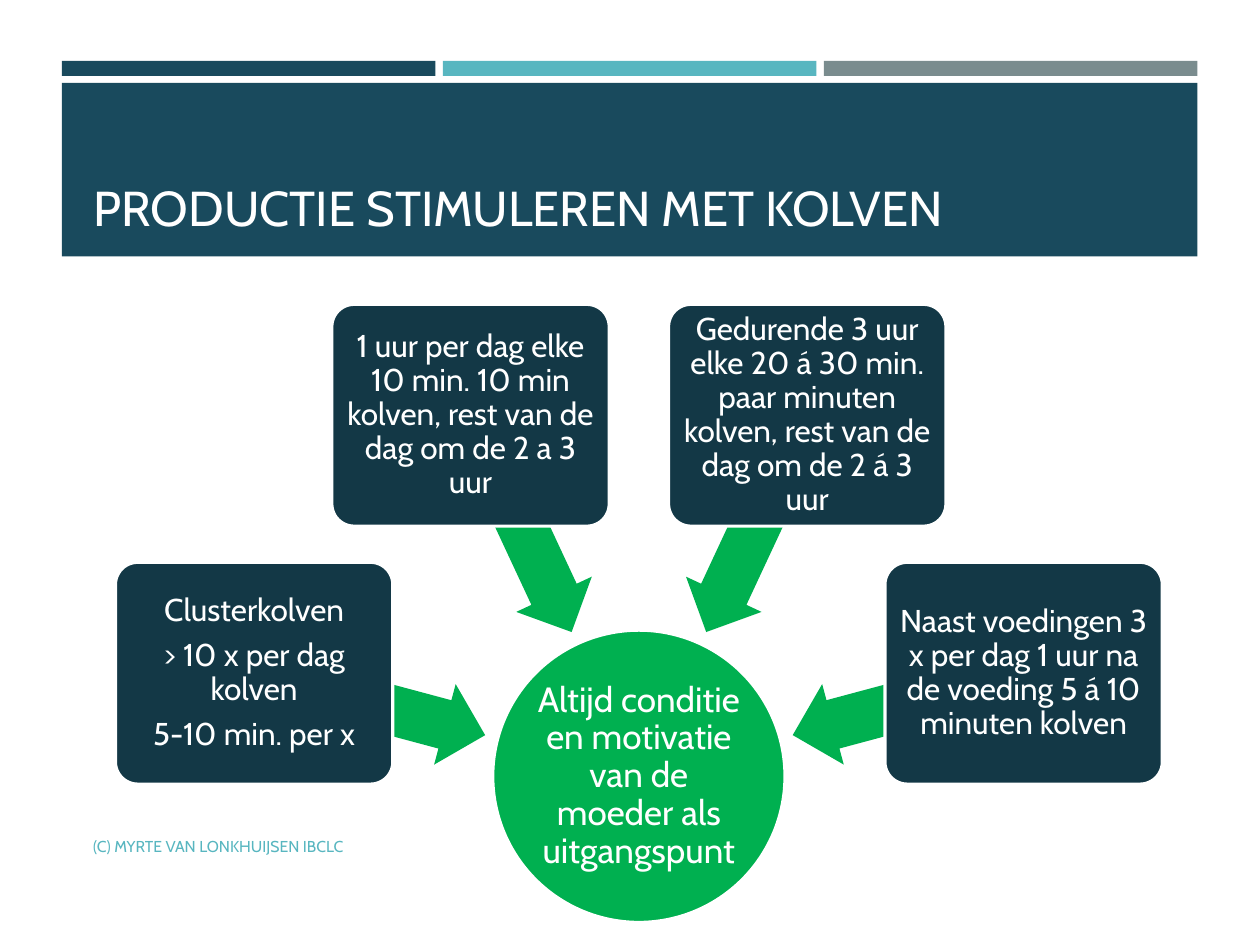
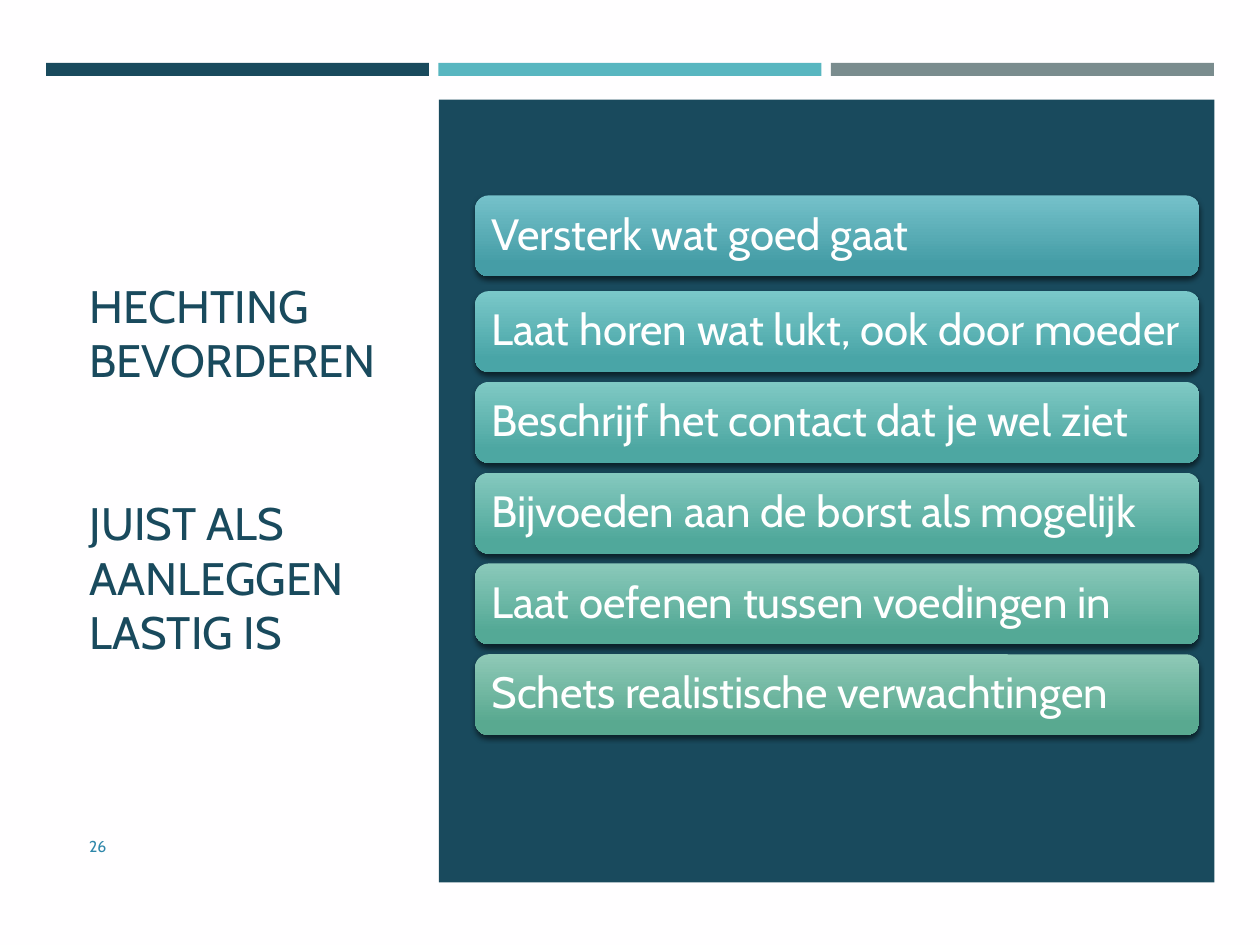
from math import cos, radians, sin

from lxml.etree import SubElement
from pptx import Presentation
from pptx.dml.color import RGBColor
from pptx.enum.shapes import MSO_SHAPE
from pptx.enum.text import MSO_ANCHOR, MSO_AUTO_SIZE, PP_ALIGN
from pptx.oxml.ns import qn
from pptx.util import Cm, Pt

NAVY, TEAL, GREY = "194A5D", "58B6C0", "7A8C8E"
DARK, GREEN, BLUE, WHITE = "133846", "00B050", "2E87AA", "FFFFFF"
FONT = "Cabin"


def color(code):
    return RGBColor.from_string(code)


class Deck:
    def __init__(self):
        self.show = Presentation()
        self.show.slide_width, self.show.slide_height = Cm(25.4), Cm(19.05)
        self.slide = None

    def page(self, back=WHITE):
        self.slide = self.show.slides.add_slide(self.show.slide_layouts[5])
        fill = self.slide.background.fill
        fill.solid()
        fill.fore_color.rgb = color(back)

    def shape(self, kind, left, top, wide, high, fill, line=None, adjust=()):
        """Fill is one colour, or a pair for a gradient from top to bottom."""
        item = self.slide.shapes.add_shape(
            kind, Cm(left), Cm(top), Cm(wide), Cm(high))
        item.shadow.inherit = False
        if isinstance(fill, str):
            item.fill.solid()
            item.fill.fore_color.rgb = color(fill)
        else:
            item.fill.gradient()
            item.fill.gradient_angle = 270
            for stop, code, place in zip(item.fill.gradient_stops, fill, (0, 0.84)):
                stop.color.rgb = color(code)
                stop.position = place
        if line:
            item.line.color.rgb = color(line)
            item.line.width = Pt(1.75)
        else:
            item.line.fill.background()
        for i, value in enumerate(adjust):
            item.adjustments[i] = value
        return item

    def around(self, kind, x, y, wide, high, fill, **style):
        """Draw a shape around its centre."""
        return self.shape(kind, x - wide / 2, y - high / 2, wide, high, fill, **style)

    def shade(self, item):
        effect = item.element.spPr.find(qn("a:effectLst"))
        outer = SubElement(effect, qn("a:outerShdw"), blurRad="38100",
                           dist="25400", dir="5400000", rotWithShape="0")
        black = SubElement(outer, qn("a:srgbClr"), val="000000")
        SubElement(black, qn("a:alpha"), val="55000")

    def words(self, item, lines, size, code=WHITE, align=PP_ALIGN.LEFT,
              anchor=MSO_ANCHOR.MIDDLE, inset=None, gap=0, after=0, space=None):
        frame = item.text_frame
        frame.word_wrap = True
        frame.auto_size = MSO_AUTO_SIZE.NONE
        frame.vertical_anchor = anchor
        if inset is not None:
            frame.margin_left = frame.margin_right = Cm(inset)
            frame.margin_top = frame.margin_bottom = Cm(inset)
        for i, line in enumerate(lines):
            para = frame.add_paragraph() if i else frame.paragraphs[0]
            para.alignment = align
            para.line_spacing = space
            para.space_before = Pt(gap if i else 0)
            para.space_after = Pt(after)
            run = para.add_run()
            run.text = line
            run.font.size = Pt(size)
            run.font.name = FONT
            run.font.color.rgb = color(code)

    def label(self, item, lines, size, inset, align=PP_ALIGN.CENTER):
        self.words(item, lines, size, align=align, inset=inset,
                   after=0.35 * size, space=0.9)

    def title(self, left, top, wide, high, lines, size, code, **style):
        item = self.slide.shapes.title
        item.left, item.top, item.width, item.height = map(Cm, (left, top, wide, high))
        item.element.getparent().append(item.element)  # in front of the band
        self.words(item, lines, size, code, **style)

    def foot(self, left, wide, text, code):
        box = self.slide.shapes.add_textbox(Cm(left), Cm(16.54), Cm(wide), Cm(1.02))
        self.words(box, [text], 9, code)

    def bars(self, left, top, wide, high, step):
        for i, code in enumerate((NAVY, TEAL, GREY)):
            self.shape(MSO_SHAPE.RECTANGLE, left + i * step, top, wide, high, code)


def pump(deck):
    deck.page()
    # Bars and title band
    deck.bars(1.25, 1.23, 7.53, 0.3, 7.68)
    deck.shape(MSO_SHAPE.RECTANGLE, 1.25, 1.67, 22.89, 3.5, NAVY)
    deck.title(1.63, 1.9, 22.2, 3, ["PRODUCTIE STIMULEREN MET KOLVEN"], 28, WHITE,
               anchor=MSO_ANCHOR.BOTTOM)

    # Hub
    hub_x, hub_y = 12.88, 15.65
    hub = deck.around(MSO_SHAPE.OVAL, hub_x, hub_y, 5.89, 5.89, GREEN, line=WHITE)
    deck.label(hub, ["Altijd conditie en motivatie van de moeder als uitgangspunt"],
               20, 0.03)

    # Boxes on an arc, each with an arrow to the hub
    notes = (
        ["Clusterkolven", "> 10 x per dag kolven", "5-10 min. per x"],
        ["1 uur per dag elke 10 min. 10 min kolven, rest van de dag om de 2 a 3 uur"],
        ["Gedurende 3 uur elke 20 á 30 min. paar minuten kolven, "
         "rest van de dag om de 2 á 3 uur"],
        ["Naast voedingen 3 x per dag 1 uur na de voeding 5 á 10 minuten kolven"],
    )
    for i, lines in enumerate(notes):
        angle = 195 + 50 * i
        dx, dy = cos(radians(angle)), sin(radians(angle))
        arrow = deck.around(MSO_SHAPE.LEFT_ARROW, hub_x + 5.61 * dx, hub_y + 5.61 * dy,
                            4.8, 1.68, GREEN, adjust=(0.6, 0.5))
        arrow.rotation = angle
        box = deck.around(MSO_SHAPE.ROUNDED_RECTANGLE, hub_x + 8.03 * dx,
                          hub_y + 8.03 * dy, 5.59, 4.47, DARK, line=WHITE, adjust=(0.1,))
        deck.label(box, lines, 18, 0.1)

    deck.foot(1.63, 13.54, "(C) MYRTE VAN LONKHUIJSEN IBCLC", TEAL)


def bond(deck):
    deck.page("FFFEFF")
    # Title, bars and panel
    deck.title(1.55, 2.9, 6.35, 13.08,
               ["HECHTING BEVORDEREN", "JUIST ALS AANLEGGEN LASTIG IS"], 26, NAVY, gap=62)
    deck.bars(0.93, 1.27, 7.72, 0.26, 7.91)
    deck.shape(MSO_SHAPE.RECTANGLE, 8.85, 2.01, 15.63, 15.78, NAVY)
    deck.foot(1.55, 1.4, "26", BLUE)

    # Rows of advice; the first stands a little apart
    rows = (
        ("Versterk wat goed gaat", "75C1CA", "459DA6"),
        ("Laat horen wat lukt, ook door moeder", "7AC8C9", "49A5A7"),
        ("Beschrijf het contact dat je wel ziet", "7FC9C4", "4DA7A2"),
        ("Bijvoeden aan de borst als mogelijk", "85C9BF", "50A89B"),
        ("Laat oefenen tussen voedingen in", "8AC9BA", "54A996"),
        ("Schets realistische verwachtingen", "8FC9B7", "59A990"),
    )
    for i, (text, *fade) in enumerate(rows):
        top = 4.04 + 1.83 * i if i else 3.94
        row = deck.shape(MSO_SHAPE.ROUNDED_RECTANGLE, 9.58, top, 14.6, 1.63, fade)
        deck.shade(row)
        deck.label(row, [text], 25, 0.25, PP_ALIGN.LEFT)


def main():
    deck = Deck()
    pump(deck)
    bond(deck)
    deck.show.save("out.pptx")


if __name__ == "__main__":
    main()
